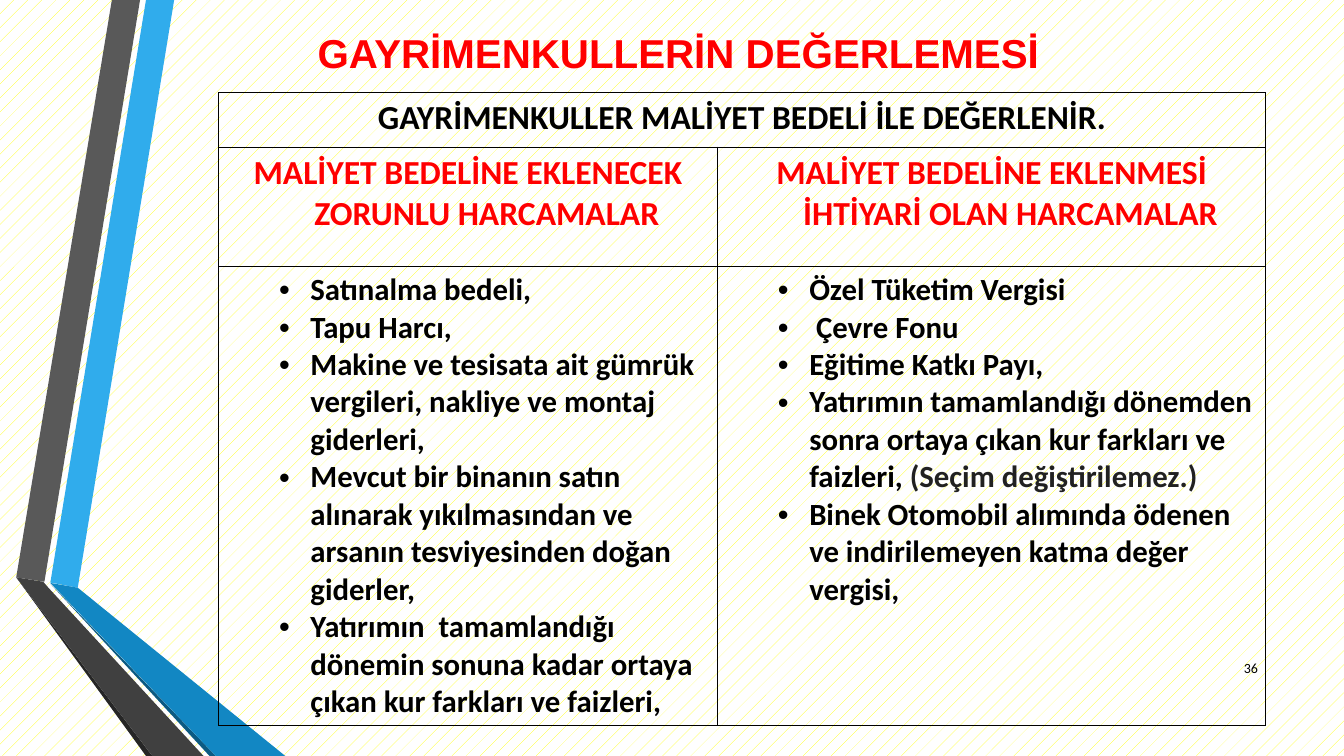
"""Build the slide on the valuation of real estate."""
from dataclasses import dataclass
from lxml.etree import SubElement
from pptx import Presentation
from pptx.dml.color import RGBColor
from pptx.enum.dml import MSO_PATTERN
from pptx.enum.text import MSO_ANCHOR, MSO_AUTO_SIZE, PP_ALIGN
from pptx.oxml.ns import qn
from pptx.slide import Slide
from pptx.table import Table, _Cell
from pptx.text.text import _Paragraph
from pptx.util import Cm, Pt


@dataclass(frozen=True)
class Theme:
    """Colours, fonts and type sizes."""
    black: str = "000000"
    red: str = "FF0000"
    note: str = "212121"
    white: str = "FFFFFF"
    yellow: str = "FFFF00"
    title_font: str = "Arial"
    body_font: str = "Calibri"
    title_size: float = 28.8
    heading_size: float = 24
    item_size: float = 22
    number_size: float = 10
    border_width: float = 1


@dataclass(frozen=True)
class Ribbon:
    """A ribbon piece, with corners in hundredths of a centimetre."""
    colour: str
    corners: tuple[tuple[int, int], ...]


@dataclass(frozen=True)
class Item:
    """A bulleted item with an optional toned-down remark."""
    text: str
    remark: str = ""
    alignment: PP_ALIGN = PP_ALIGN.LEFT


@dataclass(frozen=True)
class Column:
    """A table column."""
    width: float
    heading: str
    items: tuple[Item, ...]


THEME = Theme()
RIBBONS = (
    Ribbon("30ACEC", ((127, 1468), (196, 1481), (439, 0), (368, 0))),
    Ribbon("595959", ((353, 0), (282, 0), (41, 1455), (112, 1466))),
    Ribbon("262626", ((41, 1455), (368, 1905), (384, 1905))),
    Ribbon("0C5A82", ((127, 1471), (528, 1905), (544, 1905))),
    Ribbon("1287C3", ((127, 1469), (544, 1905), (719, 1905), (196, 1481))),
    Ribbon("404040", ((513, 1905), (122, 1481), (109, 1466), (41, 1455), (384, 1905))),
)
TITLE = "GAYRİMENKULLERİN DEĞERLEMESİ"
TABLE_HEADING = "GAYRİMENKULLER MALİYET BEDELİ İLE DEĞERLENİR."
ROW_HEIGHTS = (1.37, 3.0, 11.58)
COLUMNS = (
    Column(12.57, "MALİYET BEDELİNE EKLENECEK ZORUNLU HARCAMALAR", (
        Item("Satınalma bedeli,", alignment=PP_ALIGN.JUSTIFY),
        Item("Tapu Harcı,", alignment=PP_ALIGN.JUSTIFY),
        Item("Makine ve tesisata ait gümrük vergileri, nakliye ve montaj giderleri,"),
        Item("Mevcut bir binanın satın alınarak yıkılmasından ve arsanın "
             "tesviyesinden doğan giderler,"),
        Item("Yatırımın  tamamlandığı dönemin sonuna kadar ortaya çıkan kur "
             "farkları ve faizleri,"),
    )),
    Column(13.82, "MALİYET BEDELİNE EKLENMESİ İHTİYARİ OLAN HARCAMALAR", (
        Item("Özel Tüketim Vergisi"),
        Item(" Çevre Fonu"),
        Item("Eğitime Katkı Payı,"),
        Item("Yatırımın tamamlandığı dönemden sonra ortaya çıkan kur farkları ve "
             "faizleri, ", "(Seçim değiştirilemez.)"),
        Item("Binek Otomobil alımında ödenen ve indirilemeyen katma değer vergisi,"),
    )),
)


def style_paragraph(paragraph: _Paragraph, font_name: str, size: float, colour: str,
                    alignment: PP_ALIGN, bold: bool = True) -> None:
    """Set the font and alignment of a paragraph."""
    paragraph.alignment = alignment
    paragraph.font.name = font_name
    paragraph.font.size = Pt(size)
    paragraph.font.bold = bold
    paragraph.font.color.rgb = RGBColor.from_string(colour)


def indent_paragraph(paragraph: _Paragraph, margin: float, hanging: float) -> None:
    """Give a paragraph a hanging indent."""
    properties = paragraph._p.get_or_add_pPr()
    properties.set("marL", str(Cm(margin)))
    properties.set("indent", str(-Cm(hanging)))


def add_bullet(paragraph: _Paragraph) -> None:
    """Put a round bullet before a paragraph."""
    properties = paragraph._p.get_or_add_pPr()
    SubElement(properties, qn("a:buFont"), typeface="Arial")
    SubElement(properties, qn("a:buChar"), char="•")
    tabs = SubElement(properties, qn("a:tabLst"))
    SubElement(tabs, qn("a:tab"), pos=str(Cm(2.54)), algn="l")


def add_ribbon(slide: Slide, ribbon: Ribbon) -> None:
    """Draw one ribbon piece."""
    start, *others = ribbon.corners
    builder = slide.shapes.build_freeform(*start, scale=Cm(0.01))
    builder.add_line_segments(others, close=True)
    shape = builder.convert_to_shape()
    shape.shadow.inherit = False
    shape.fill.solid()
    shape.fill.fore_color.rgb = RGBColor.from_string(ribbon.colour)
    shape.line.fill.background()


def add_title(slide: Slide) -> None:
    """Place and format the title."""
    title = slide.shapes.title
    title.left, title.top, title.width, title.height = Cm(5.82), Cm(0.53), Cm(22.56), Cm(1.6)
    title.text_frame.text = TITLE
    title.text_frame.vertical_anchor = MSO_ANCHOR.MIDDLE
    title.text_frame.auto_size = MSO_AUTO_SIZE.NONE
    style_paragraph(title.text_frame.paragraphs[0], THEME.title_font, THEME.title_size,
                    THEME.red, PP_ALIGN.CENTER)


def add_slide_number(slide: Slide) -> None:
    """Write the slide number."""
    frame = slide.shapes.add_textbox(Cm(30.43), Cm(16.31), Cm(1.52), Cm(1.02)).text_frame
    frame.word_wrap = True
    frame.vertical_anchor = MSO_ANCHOR.MIDDLE
    frame.text = "36"
    style_paragraph(frame.paragraphs[0], THEME.body_font, THEME.number_size,
                    THEME.black, PP_ALIGN.RIGHT, bold=False)


def outline_cell(cell: _Cell) -> None:
    """Draw the four borders of a cell and clear its fill."""
    properties = cell._tc.get_or_add_tcPr()
    for side in ("lnL", "lnR", "lnT", "lnB"):
        border = SubElement(properties, qn(f"a:{side}"), w=str(Pt(THEME.border_width)))
        fill = SubElement(border, qn("a:solidFill"))
        SubElement(fill, qn("a:srgbClr"), val=THEME.black)
    cell.fill.background()


def write_heading(cell: _Cell, text: str, colour: str) -> None:
    """Write a centred heading in a cell."""
    cell.text = text
    paragraph = cell.text_frame.paragraphs[0]
    style_paragraph(paragraph, THEME.body_font, THEME.heading_size, colour, PP_ALIGN.CENTER)
    indent_paragraph(paragraph, 0.95, 0.95)


def write_items(cell: _Cell, items: tuple[Item, ...]) -> None:
    """Write a bulleted list in a cell."""
    frame = cell.text_frame
    for index, item in enumerate(items):
        paragraph = frame.add_paragraph() if index else frame.paragraphs[0]
        paragraph.level = 1
        paragraph.add_run().text = item.text
        if item.remark:
            remark = paragraph.add_run()
            remark.text = item.remark
            remark.font.color.rgb = RGBColor.from_string(THEME.note)
        indent_paragraph(paragraph, 2.06, 0.79)
        add_bullet(paragraph)
        style_paragraph(paragraph, THEME.body_font, THEME.item_size, THEME.black,
                        item.alignment)


def add_cost_table(slide: Slide) -> None:
    """Add the table of compulsory and optional costs."""
    width = sum(column.width for column in COLUMNS)
    table: Table = slide.shapes.add_table(len(ROW_HEIGHTS), len(COLUMNS), Cm(5.51), Cm(2.34),
                                          Cm(width), Cm(sum(ROW_HEIGHTS))).table
    table.first_row = table.horz_banding = False
    for row, height in zip(table.rows, ROW_HEIGHTS):
        row.height = Cm(height)
    for cell in table.iter_cells():
        outline_cell(cell)
    table.cell(0, 0).merge(table.cell(0, len(COLUMNS) - 1))
    write_heading(table.cell(0, 0), TABLE_HEADING, THEME.black)
    for index, column in enumerate(COLUMNS):
        table.columns[index].width = Cm(column.width)
        write_heading(table.cell(1, index), column.heading, THEME.red)
        write_items(table.cell(2, index), column.items)


def main() -> None:
    """Build and save the presentation."""
    presentation = Presentation()
    presentation.slide_width, presentation.slide_height = Cm(33.87), Cm(19.05)
    slide = presentation.slides.add_slide(presentation.slide_layouts.get_by_name("Title Only"))
    background = slide.background.fill
    background.patterned()
    background.pattern = MSO_PATTERN.PERCENT_5
    background.fore_color.rgb = RGBColor.from_string(THEME.yellow)
    background.back_color.rgb = RGBColor.from_string(THEME.white)
    for ribbon in RIBBONS:
        add_ribbon(slide, ribbon)
    add_title(slide)
    add_slide_number(slide)
    add_cost_table(slide)
    presentation.save("out.pptx")


if __name__ == "__main__":
    main()
